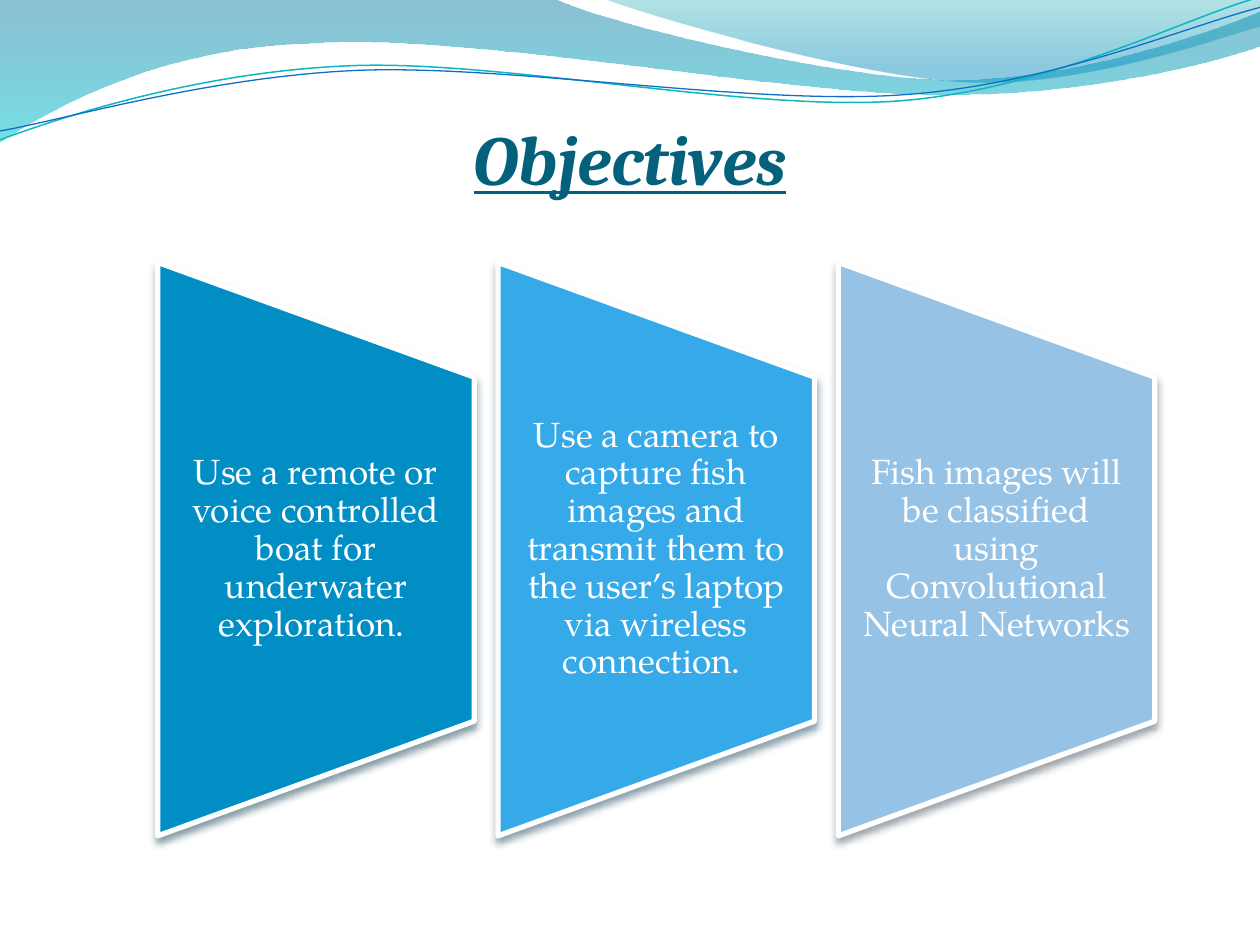
from lxml import etree
from pptx import Presentation
from pptx.dml.color import RGBColor
from pptx.enum.shapes import MSO_SHAPE
from pptx.enum.text import MSO_ANCHOR, PP_ALIGN
from pptx.oxml.ns import qn
from pptx.util import Cm, Pt

TRAPEZOID = MSO_SHAPE.FLOWCHART_MANUAL_OPERATION
MIDDLE, BOTTOM = MSO_ANCHOR.MIDDLE, MSO_ANCHOR.BOTTOM
CENTER = PP_ALIGN.CENTER

WHITE = RGBColor(0xFF, 0xFF, 0xFF)
TITLE_TEAL = RGBColor(0x04, 0x61, 0x7B)
DEEP_BLUE = RGBColor(0x00, 0x74, 0xA1)
CYAN = RGBColor(0x00, 0xC6, 0xCF)
SEA_GREEN = RGBColor(0x00, 0xA1, 0xA9)
SEA_BLUE = RGBColor(0x00, 0x8B, 0xBF)
LINE_TEAL = RGBColor(0x0A, 0xB8, 0xBF)
LINE_BLUE = RGBColor(0x0F, 0x6F, 0xC6)

WAVE_ROTATION = 357.3
WIDE_BAND = [
    [(0, 0)],
    [(11.18, -0.03)],
    [(12.09, 0.43), (16.87, 1.6), (19.25, 1.6)],
    [(21.67, 1.6), (24.33, 0.66), (25.4, 0.23)],
    [(25.43, 0.91)],
    [(24.97, 1.12), (22.1, 1.93), (18.95, 1.91)],
    [(15.8, 1.91), (9.7, 0.71), (6.53, 0.86)],
    [(3.28, 0.91), (1.17, 2.11), (-0.03, 2.87)],
]
RIGHT_BAND = [
    [(12.17, -0.03)],
    [(12.93, 0.28), (17.32, 1.57), (19.53, 1.65)],
    [(21.74, 1.75), (24.41, 0.81), (25.4, 0.53)],
    [(25.4, 0)],
]
TEAL_WAVE = [
    [(-0.05, 2.22)],
    [(1.19, 1.82), (4.02, 1.04), (7.05, 1.06)],
    [(10.05, 1.07), (15.02, 2.37), (18.08, 2.29)],
    [(21.13, 2.2), (23.87, 0.91), (25.41, 0.55)],
]
BLUE_WAVE = [
    [(-0.04, 2.04)],
    [(1.16, 1.9), (4.18, 1.15), (7.2, 1.16)],
    [(10.25, 1.18), (15.13, 2.25), (18.18, 2.17)],
    [(21.21, 2.1), (23.93, 1.06), (25.45, 0.75)],
]

OBJECTIVES = [
    ("Use a remote or voice controlled boat for underwater exploration. ",
     RGBColor(0x00, 0x8E, 0xC5), RGBColor(0x00, 0x32, 0x45)),
    ("Use a camera to capture fish images and transmit them to the user’s "
     "laptop via wireless connection. ",
     RGBColor(0x36, 0xA9, 0xE9), RGBColor(0x12, 0x3C, 0x53)),
    ("Fish images will be classified using Convolutional Neural Networks",
     RGBColor(0x95, 0xC2, 0xE5), RGBColor(0x34, 0x44, 0x51)),
]
FIRST_CENTER, CENTER_PITCH, CENTER_Y = 6.37, 6.86, 11.07
PANEL_LENGTH, PANEL_WIDTH, TEXT_HEIGHT = 11.56, 6.38, 6.93


def add_outline(slide, segments, close):
    start, *anchors = [(Cm(x), Cm(y)) for x, y in (part[-1] for part in segments)]
    builder = slide.shapes.build_freeform(*start)
    builder.add_line_segments(anchors, close=close)
    shape = builder.convert_to_shape()
    shape.shadow.inherit = False
    lines = list(shape.element.spPr.iter(qn("a:lnTo")))
    for line, segment in zip(lines, segments[1:]):
        if len(segment) == 3:
            curve = etree.Element(qn("a:cubicBezTo"))
            for x, y in segment:
                etree.SubElement(curve, qn("a:pt"), x=str(Cm(x) - shape.left),
                                 y=str(Cm(y) - shape.top))
            line.getparent().replace(line, curve)
    return shape


def add_band(slide, segments, stops):
    band = add_outline(slide, segments, True)
    band.line.fill.background()
    band.fill.gradient()
    band.fill.gradient_angle = 270
    for stop, (position, color, _) in zip(band.fill.gradient_stops, stops):
        stop.position = position
        stop.color.rgb = color
    colors = band.element.spPr.iter(qn("a:srgbClr"))
    for color, (_, _, opacity) in zip(colors, stops):
        etree.SubElement(color, qn("a:alpha"), val=str(opacity * 1000))


def add_wave(slide, segments, color, width):
    wave = add_outline(slide, segments, False)
    wave.rotation = WAVE_ROTATION
    wave.fill.background()
    wave.line.color.rgb = color
    wave.line.width = Pt(width)


def add_shadow(shape, color):
    shape.shadow.inherit = False
    effects = shape.element.spPr.find(qn("a:effectLst"))
    shadow = etree.SubElement(
        effects, qn("a:outerShdw"), blurRad=str(Pt(4.5)), dist=str(Pt(3)),
        dir="5400000", rotWithShape="0")
    tint = etree.SubElement(shadow, qn("a:srgbClr"), val=str(color))
    etree.SubElement(tint, qn("a:alpha"), val="48000")


def set_insets(frame, side, top):
    frame.margin_left = frame.margin_right = Cm(side)
    frame.margin_top = Cm(top)
    frame.margin_bottom = 0


def format_text(frame, anchor, font_name, size, color):
    frame.word_wrap = True
    frame.vertical_anchor = anchor
    paragraph = frame.paragraphs[0]
    paragraph.alignment = CENTER
    font = paragraph.runs[0].font
    font.name = font_name
    font.size = Pt(size)
    font.color.rgb = color
    return paragraph


def add_title(slide):
    title = slide.shapes.title
    title.left, title.top = Cm(1.27), Cm(0.84)
    title.width, title.height = Cm(22.86), Cm(3.18)
    frame = title.text_frame
    frame.text = "Objectives"
    set_insets(frame, 0, 0.13)
    paragraph = format_text(frame, BOTTOM, "Cambria", 40, TITLE_TEAL)
    font = paragraph.runs[0].font
    font.bold = font.italic = font.underline = True
    title.element.getparent().append(title.element)


def add_panel(slide, center_x, text, color, shadow_color):
    panel = slide.shapes.add_shape(
        TRAPEZOID, Cm(center_x - PANEL_LENGTH / 2), Cm(CENTER_Y - PANEL_WIDTH / 2),
        Cm(PANEL_LENGTH), Cm(PANEL_WIDTH))
    panel.rotation = 270
    panel.fill.solid()
    panel.fill.fore_color.rgb = color
    panel.line.color.rgb = WHITE
    panel.line.width = Pt(3)
    add_shadow(panel, shadow_color)
    box = slide.shapes.add_textbox(
        Cm(center_x - PANEL_WIDTH / 2), Cm(CENTER_Y - TEXT_HEIGHT / 2),
        Cm(PANEL_WIDTH), Cm(TEXT_HEIGHT))
    frame = box.text_frame
    frame.text = text
    set_insets(frame, 0.36, 0)
    paragraph = format_text(frame, MIDDLE, "TeX Gyre Pagella", 20, WHITE)
    paragraph.line_spacing = 0.9


def main():
    deck = Presentation()
    deck.slide_width, deck.slide_height = Cm(25.4), Cm(19.05)
    slide = deck.slides.add_slide(deck.slide_layouts[5])
    add_band(slide, WIDE_BAND, [(0, DEEP_BLUE, 45), (1, CYAN, 55)])
    add_band(slide, RIGHT_BAND, [(0, SEA_GREEN, 30), (0.8, SEA_BLUE, 45)])
    add_wave(slide, TEAL_WAVE, LINE_TEAL, 0.85)
    add_wave(slide, BLUE_WAVE, LINE_BLUE, 0.75)
    add_title(slide)
    for index, objective in enumerate(OBJECTIVES):
        add_panel(slide, FIRST_CENTER + index * CENTER_PITCH, *objective)
    deck.save("out.pptx")


if __name__ == "__main__":
    main()
